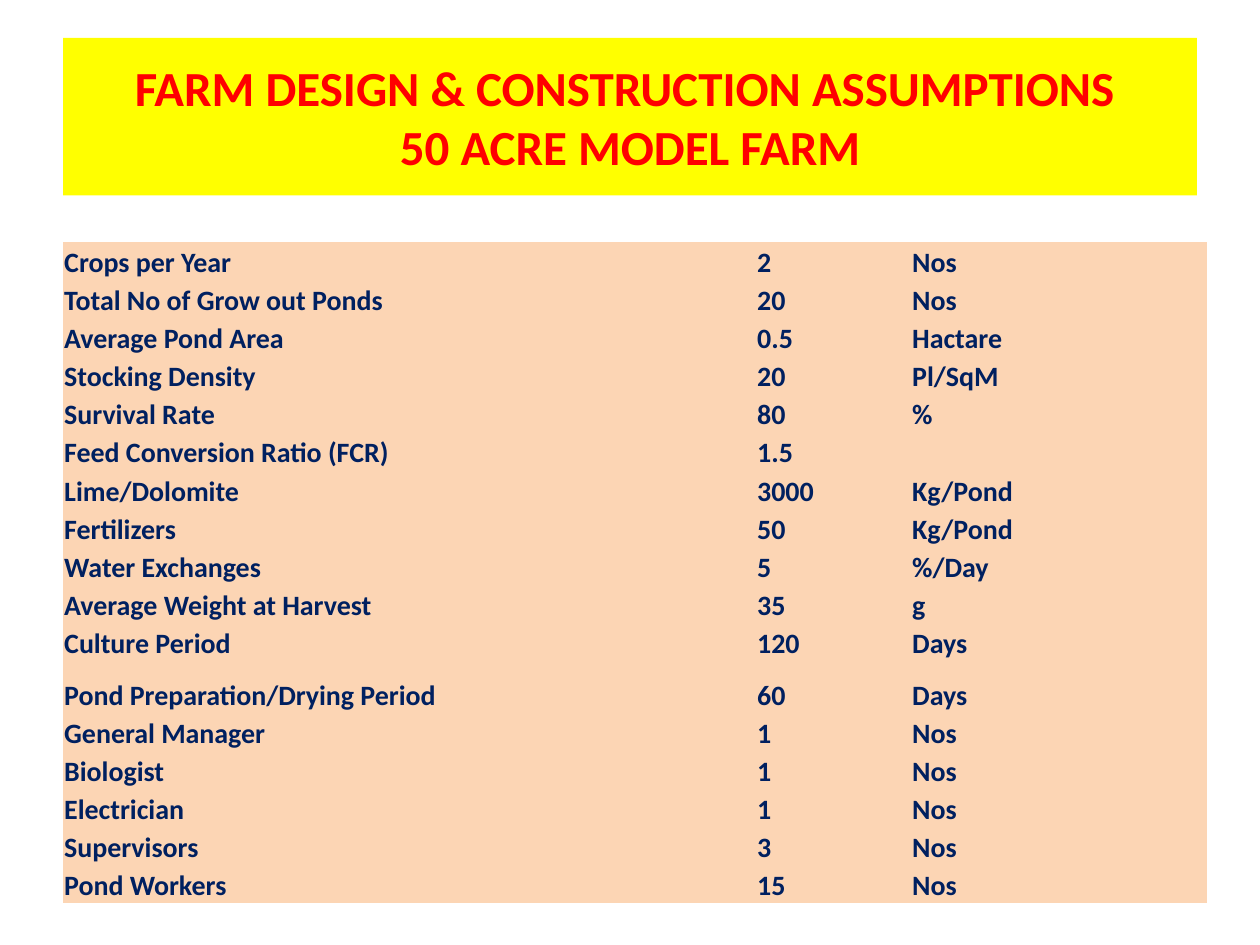
from pptx import Presentation
from pptx.dml.color import RGBColor
from pptx.enum.text import MSO_ANCHOR, PP_ALIGN
from pptx.util import Inches, Pt

# Content
TITLE = "FARM DESIGN & CONSTRUCTION ASSUMPTIONS \v50 ACRE MODEL FARM"
ROWS = [
    ("Crops per Year", "2", "Nos"),
    ("Total No of Grow out Ponds", "20", "Nos"),
    ("Average Pond Area", "0.5", "Hactare"),
    ("Stocking Density", "20", "Pl/SqM"),
    ("Survival Rate", "80", "%"),
    ("Feed Conversion Ratio (FCR)", "1.5", ""),
    ("Lime/Dolomite", "3000", "Kg/Pond"),
    ("Fertilizers", "50", "Kg/Pond"),
    ("Water Exchanges", "5", "%/Day"),
    ("Average Weight at Harvest", "35", "g"),
    ("Culture Period", "120", "Days"),
    ("Pond Preparation/Drying Period", "60", "Days"),
    ("General Manager", "1", "Nos"),
    ("Biologist", "1", "Nos"),
    ("Electrician", "1", "Nos"),
    ("Supervisors", "3", "Nos"),
    ("Pond Workers", "15", "Nos"),
]

# Look
YELLOW = RGBColor(0xFF, 0xFF, 0x00)
RED = RGBColor(0xFF, 0x00, 0x00)
PEACH = RGBColor(0xFC, 0xD5, 0xB4)
NAVY = RGBColor(0x00, 0x20, 0x60)
NO_GRID = "{2D5ABB26-0587-4C30-8999-92F81FD0307C}"

# Layout in inches
LEFT = 0.5
TOP = 1.92
HIGH = 5.25
COLS = (5.5, 1.23, 2.35)
TALL_ROW, TALL = 11, 0.41
ROW = (HIGH - TALL) / (len(ROWS) - 1)


def set_font(para, size, color):
    font = para.font
    font.name = "Calibri"
    font.size = Pt(size)
    font.bold = True
    font.color.rgb = color


deck = Presentation()
deck.slide_width, deck.slide_height = Inches(10), Inches(7.5)
slide = deck.slides.add_slide(deck.slide_layouts[5])

# Title band
title = slide.shapes.title
title.left, title.top = Inches(LEFT), Inches(0.3)
title.width, title.height = Inches(9), Inches(1.25)
title.fill.solid()
title.fill.fore_color.rgb = YELLOW
frame = title.text_frame
frame.text = TITLE
frame.vertical_anchor = MSO_ANCHOR.MIDDLE
frame.paragraphs[0].alignment = PP_ALIGN.CENTER
set_font(frame.paragraphs[0], 28, RED)

# Table grid, without style bands or borders
table = slide.shapes.add_table(
    len(ROWS), len(COLS), Inches(LEFT), Inches(TOP),
    Inches(sum(COLS)), Inches(HIGH)).table
table.first_row = table.horz_banding = False
table._tbl.tblPr[0].text = NO_GRID
for col, width in zip(table.columns, COLS):
    col.width = Inches(width)

# Table cells
for r, texts in enumerate(ROWS):
    table.rows[r].height = Inches(TALL if r == TALL_ROW else ROW)
    for c, text in enumerate(texts):
        cell = table.cell(r, c)
        cell.fill.solid()
        cell.fill.fore_color.rgb = PEACH
        cell.vertical_anchor = MSO_ANCHOR.BOTTOM
        cell.margin_left = cell.margin_right = cell.margin_top = Inches(0.01)
        cell.margin_bottom = 0
        cell.text = text
        set_font(cell.text_frame.paragraphs[0], 16, NAVY)

deck.save("out.pptx")
